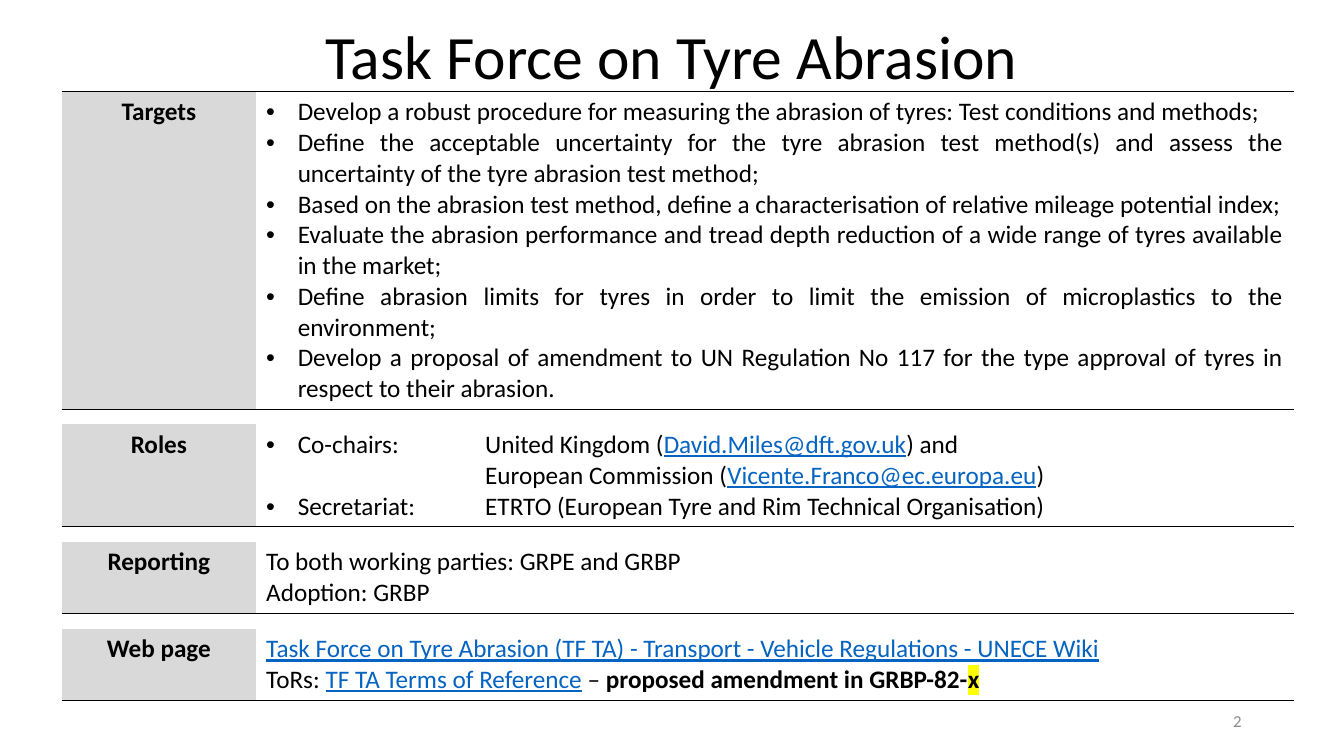
from lxml.etree import SubElement
from pptx import Presentation
from pptx.dml.color import RGBColor
from pptx.enum.text import MSO_ANCHOR as Anchor, PP_ALIGN as Align
from pptx.oxml.ns import qn
from pptx.util import Pt

BLACK, GREY, LINK, LABEL, YELLOW = "000000", "8C8C8C", "0563C1", "D9D9D9", "FFFF00"
NO_STYLE = "{2D5ABB26-0587-4C30-8999-92F81FD0307C}"
LINE, MARGIN, GAP = 21.97, 7.2, 10.8  # text line, cell margins, spacer row
HANG, NAME_TAB = 22.5, 156.4  # bullet indent, column of names
LINKED = dict(color_hex=LINK, underline=True)


def color(value):
    return RGBColor.from_string(value)


def add_run(paragraph, text, size=18, color_hex=BLACK, bold=False, underline=False,
            highlight=None):
    run = paragraph.add_run()
    run.text = text
    font = run.font
    font.name, font.size, font.bold, font.underline = "Calibri", Pt(size), bold, underline
    font.color.rgb = color(color_hex)
    if highlight:
        properties = run._r.get_or_add_rPr()
        mark = SubElement(properties, qn("a:highlight"))
        SubElement(mark, qn("a:srgbClr"), val=highlight)
        properties.find(qn("a:solidFill")).addnext(mark)


def write(frame, paragraphs):
    """Each paragraph is (runs, layout); each run is (text, format)."""
    for index, (runs, layout) in enumerate(paragraphs):
        paragraph = frame.add_paragraph() if index else frame.paragraphs[0]
        paragraph.alignment = layout.get("align", Align.LEFT)
        paragraph.line_spacing = layout.get("spacing")
        properties = paragraph._p.get_or_add_pPr()
        indent = layout.get("indent", 0)
        properties.set("marL", str(Pt(indent)))
        if layout.get("bullet"):
            properties.set("indent", str(-Pt(indent)))
            SubElement(properties, qn("a:buFont"), typeface="Arial")
            SubElement(properties, qn("a:buChar"), char="•")
        if "tab" in layout:
            tabs = SubElement(properties, qn("a:tabLst"))
            SubElement(tabs, qn("a:tab"), pos=str(Pt(layout["tab"])), algn="l")
        for text, style in runs:
            add_run(paragraph, text, **style)


def plain(text):
    return [(text, {})], {}


def bullet(*runs, **layout):
    return list(runs), dict(bullet=True, indent=HANG, **layout)


class SlideBuilder:
    def __init__(self, presentation):
        self.slide = presentation.slides.add_slide(presentation.slide_layouts[6])

    def text(self, left, top, width, height, text, align, spacing=None, **style):
        box = self.slide.shapes.add_textbox(Pt(left), Pt(top), Pt(width), Pt(height))
        frame = box.text_frame
        frame.word_wrap = True
        frame.vertical_anchor = Anchor.MIDDLE
        write(frame, [([(text, style)], dict(align=align, spacing=spacing))])

    def border(self, cell, side):
        line = SubElement(cell._tc.get_or_add_tcPr(), qn("a:" + side), w=str(Pt(1)))
        fill = SubElement(line, qn("a:solidFill"))
        SubElement(fill, qn("a:srgbClr"), val=BLACK)

    def spacer(self, cell):
        cell.margin_top = cell.margin_bottom = 0
        SubElement(cell.text_frame.paragraphs[0]._p, qn("a:endParaRPr"), sz="200")
        cell.fill.background()

    def table(self, left, top, widths, sections):
        heights = []
        for _, lines, _ in sections:
            heights += [lines * LINE + MARGIN, GAP]
        heights.pop()
        table = self.slide.shapes.add_table(
            len(heights), len(widths), Pt(left), Pt(top), Pt(sum(widths)), Pt(sum(heights))).table
        table.first_row = table.horz_banding = False
        table._tbl.tblPr.find(qn("a:tableStyleId")).text = NO_STYLE
        for column, width in zip(table.columns, widths):
            column.width = Pt(width)
        for index, (row, height) in enumerate(zip(table.rows, heights)):
            row.height = Pt(height)
            if index % 2:
                for cell in row.cells:
                    self.spacer(cell)
                continue
            label, _, body = sections[index // 2]
            label_cell, body_cell = row.cells
            for cell in row.cells:
                if index == 0:
                    self.border(cell, "lnT")
                self.border(cell, "lnB")
            label_cell.fill.solid()
            label_cell.fill.fore_color.rgb = color(LABEL)
            body_cell.fill.background()
            write(label_cell.text_frame, [([(label, dict(bold=True))], dict(align=Align.CENTER))])
            write(body_cell.text_frame, body)


TARGETS = [
    "Develop a robust procedure for measuring the abrasion of tyres: Test conditions and methods;",
    "Define the acceptable uncertainty for the tyre abrasion test method(s) and assess the "
    "uncertainty of the tyre abrasion test method;",
    "Based on the abrasion test method, define a characterisation of relative mileage potential "
    "index;",
    "Evaluate the abrasion performance and tread depth reduction of a wide range of tyres "
    "available in the market;",
    "Define abrasion limits for tyres in order to limit the emission of microplastics to the "
    "environment;",
    "Develop a proposal of amendment to UN Regulation No 117 for the type approval of tyres in "
    "respect to their abrasion.",
]
ROLES = [
    bullet(("Co-chairs:\tUnited Kingdom (", {}), ("David.Miles@dft.gov.uk", LINKED),
           (") and", {}), tab=NAME_TAB),
    ([("European Commission (", {}), ("Vicente.Franco@ec.europa.eu", LINKED), (")", {})],
     dict(indent=NAME_TAB)),
    bullet(("Secretariat:\tETRTO (European Tyre and Rim Technical Organisation)", {}),
           tab=NAME_TAB),
]
REPORTING = [plain("To both working parties: GRPE and GRBP"), plain("Adoption: GRBP")]
WEB_PAGE = [
    ([("Task Force on Tyre Abrasion (TF TA) - Transport - Vehicle Regulations - UNECE Wiki",
       LINKED)], {}),
    ([("ToRs: ", {}), ("TF TA Terms of Reference", LINKED), (" – ", {}),
      ("proposed amendment in GRBP-82-", dict(bold=True)),
      ("x", dict(bold=True, highlight=YELLOW))], {}),
]
# Label, number of text lines, body paragraphs
SECTIONS = [
    ("Targets", 10, [bullet((target, {}), align=Align.JUSTIFY) for target in TARGETS]),
    ("Roles", 3, ROLES),
    ("Reporting", 2, REPORTING),
    ("Web page", 2, WEB_PAGE),
]


def main():
    presentation = Presentation()
    presentation.slide_width, presentation.slide_height = Pt(960), Pt(540)
    builder = SlideBuilder(presentation)
    # Title
    builder.text(66, 6.5, 828, 72.5, "Task Force on Tyre Abrasion", Align.CENTER,
                 spacing=0.9, size=44)
    # Task force table
    builder.table(44, 65.5, [139, 741], SECTIONS)
    # Slide number
    builder.text(678, 500.5, 216, 28.8, "2", Align.RIGHT, size=12, color_hex=GREY)
    presentation.save("out.pptx")


if __name__ == "__main__":
    main()
